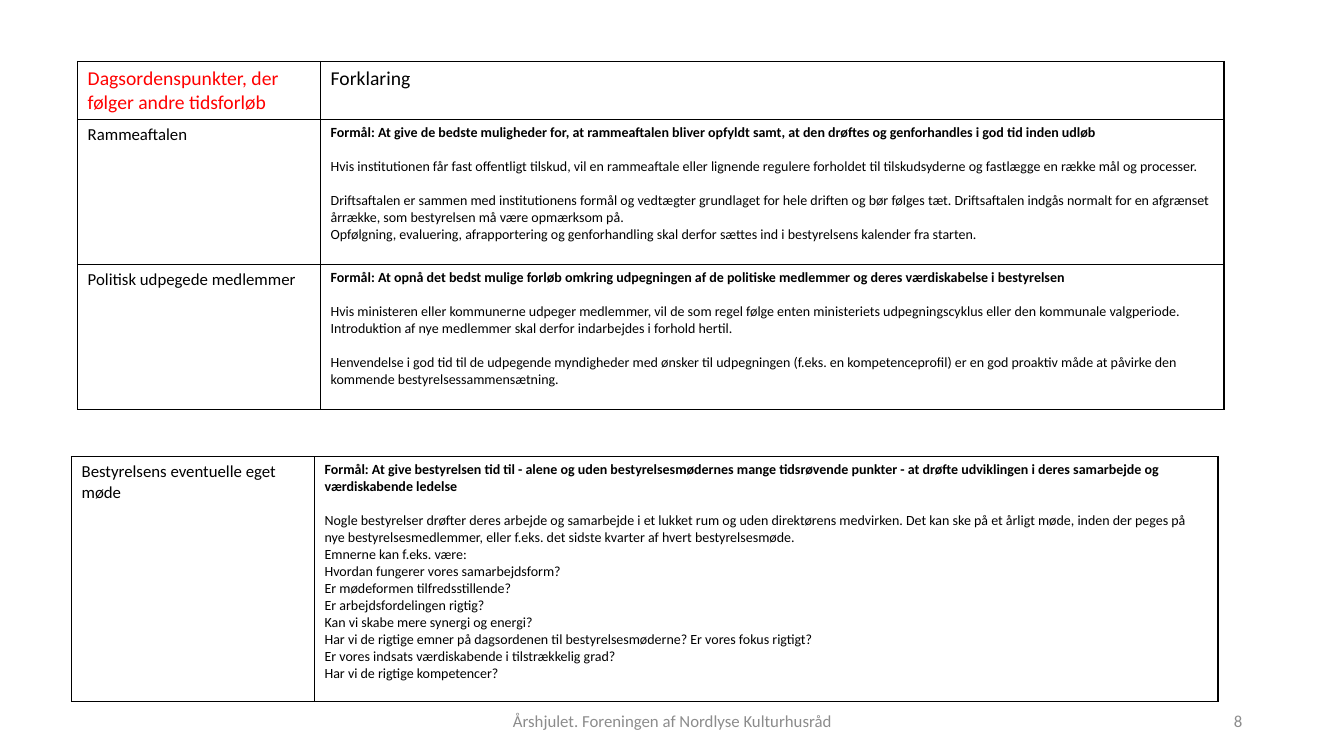
"""Build the agenda slide with two bordered tables and a footer."""
import pptx
import pptx.util
import pptx.dml.color
import pptx.enum.text
import pptx.oxml
import pptx.oxml.ns

Inches, Pt = pptx.util.Inches, pptx.util.Pt
ALIGN = pptx.enum.text.PP_ALIGN
FONT, BLACK, RED, GREY = "Calibri", "000000", "FF0000", "8C8C8C"
COLS = (2.41, 8.96)

HEAD = ("Dagsordenspunkter, der følger andre tidsforløb", "Forklaring")
FRAME = ("Rammeaftalen", [
    ["Formål: At give de bedste muligheder for, at rammeaftalen bliver opfyldt samt, at den drøftes og genforhandles i god tid inden udløb"],
    ["Hvis institutionen får fast offentligt tilskud, vil en rammeaftale eller lignende regulere forholdet til tilskudsyderne og fastlægge en række mål og processer."],
    ["Driftsaftalen er sammen med institutionens formål og vedtægter grundlaget for hele driften og bør følges tæt. Driftsaftalen indgås normalt for en afgrænset årrække, som bestyrelsen må være opmærksom på.",
     "Opfølgning, evaluering, afrapportering og genforhandling skal derfor sættes ind i bestyrelsens kalender fra starten."],
])
MEMBERS = ("Politisk udpegede medlemmer", [
    ["Formål: At opnå det bedst mulige forløb omkring udpegningen af de politiske medlemmer og deres værdiskabelse i bestyrelsen"],
    ["Hvis ministeren eller kommunerne udpeger medlemmer, vil de som regel følge enten ministeriets udpegningscyklus eller den kommunale valgperiode. Introduktion af nye medlemmer skal derfor indarbejdes i forhold hertil."],
    ["Henvendelse i god tid til de udpegende myndigheder med ønsker til udpegningen (f.eks. en kompetenceprofil) er en god proaktiv måde at påvirke den kommende bestyrelsessammensætning."],
])
MEETING = ("Bestyrelsens eventuelle eget møde", [
    ["Formål: At give bestyrelsen tid til - alene og uden bestyrelsesmødernes mange tidsrøvende punkter - at drøfte udviklingen i deres samarbejde og værdiskabende ledelse"],
    ["Nogle bestyrelser drøfter deres arbejde og samarbejde i et lukket rum og uden direktørens medvirken. Det kan ske på et årligt møde, inden der peges på nye bestyrelsesmedlemmer, eller f.eks. det sidste kvarter af hvert bestyrelsesmøde.",
     "Emnerne kan f.eks. være:",
     "Hvordan fungerer vores samarbejdsform?",
     "Er mødeformen tilfredsstillende?",
     "Er arbejdsfordelingen rigtig?",
     "Kan vi skabe mere synergi og energi?",
     "Har vi de rigtige emner på dagsordenen til bestyrelsesmøderne? Er vores fokus rigtigt?",
     "Er vores indsats værdiskabende i tilstrækkelig grad?",
     "Har vi de rigtige kompetencer?"],
])
TABLES = [
    (0.77, 0.61, (0.57, 1.44, 1.44), (HEAD, FRAME, MEMBERS)),
    (0.71, 4.53, (2.43,), (MEETING,)),
]
FOOTER = [
    (4.42, 4.5, "Årshjulet. Foreningen af Nordlyse Kulturhusråd", ALIGN.CENTER),
    (9.42, 3, "8", ALIGN.RIGHT),
]


def style(para, size, color=BLACK, bold=False):
    """Set the font of a paragraph."""
    font = para.font
    font.name, font.size, font.bold = FONT, Pt(size), bold
    font.color.rgb = pptx.dml.color.RGBColor.from_string(color)


def border(cell):
    """Clear the fill and draw thin black lines round a cell."""
    cell.fill.background()
    props = cell._tc.get_or_add_tcPr()
    space = pptx.oxml.ns.nsdecls("a")
    for spot, side in enumerate("LRTB"):
        props.insert(spot, pptx.oxml.parse_xml(
            f'<a:ln{side} {space} w="12700"><a:solidFill>'
            f'<a:srgbClr val="{BLACK}"/></a:solidFill></a:ln{side}>'))


def write(cell, blocks):
    """Write blocks of lines, the first bold, with a gap between blocks."""
    frame = cell.text_frame
    frame.text = "\n".join(line for block in blocks for line in block)
    paras = iter(frame.paragraphs)
    for num, block in enumerate(blocks):
        for pos, line in enumerate(block):
            para = next(paras)
            style(para, 10, bold=num == 0)
            if num and pos == 0:
                para.space_before = Pt(12.2)


def add_grid(slide, left, top, heights, rows):
    """Add one bordered two-column table."""
    grid = slide.shapes.add_table(
        len(rows), len(COLS), Inches(left), Inches(top),
        Inches(sum(COLS)), Inches(sum(heights))).table
    grid.first_row = grid.horz_banding = False
    for col, width in zip(grid.columns, COLS):
        col.width = Inches(width)
    for num, (row, height) in enumerate(zip(rows, heights)):
        grid.rows[num].height = Inches(height)
        for pos, item in enumerate(row):
            cell = grid.cell(num, pos)
            border(cell)
            if isinstance(item, list):
                write(cell, item)
                continue
            cell.text = item
            head = row is HEAD
            style(cell.text_frame.paragraphs[0], 14 if head else 12,
                  RED if head and pos == 0 else BLACK)


def main():
    """Make and save the slide."""
    deck = pptx.Presentation()
    deck.slide_width, deck.slide_height = Inches(13.33), Inches(7.5)
    slide = deck.slides.add_slide(deck.slide_layouts[6])
    for table in TABLES:
        add_grid(slide, *table)
    for left, width, text, align in FOOTER:
        box = slide.shapes.add_textbox(
            Inches(left), Inches(6.95), Inches(width), Inches(0.4))
        frame = box.text_frame
        frame.word_wrap = True
        frame.vertical_anchor = pptx.enum.text.MSO_ANCHOR.MIDDLE
        frame.text = text
        para = frame.paragraphs[0]
        para.alignment = align
        style(para, 12, GREY)
    deck.save("out.pptx")


if __name__ == "__main__":
    main()
